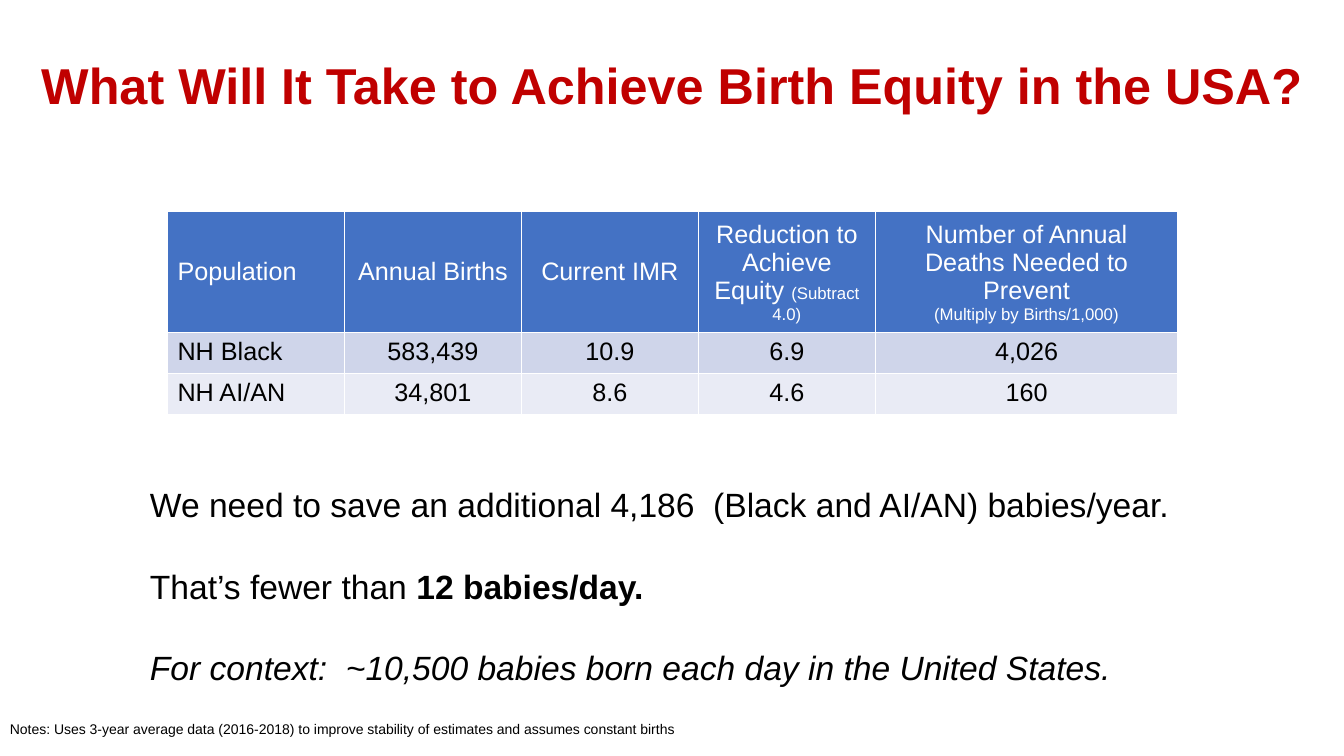
from dataclasses import dataclass

from lxml.etree import SubElement
from pptx import Presentation
from pptx.dml.color import RGBColor
from pptx.enum.text import MSO_ANCHOR as Anchor, PP_ALIGN as Align
from pptx.oxml.ns import qn
from pptx.slide import Slide
from pptx.table import _Cell as Cell
from pptx.text.text import TextFrame
from pptx.util import Cm, Pt

FONT = "Arial"
RED = RGBColor(0xC0, 0x00, 0x00)
BLACK = RGBColor(0x00, 0x00, 0x00)
WHITE = RGBColor(0xFF, 0xFF, 0xFF)
HEADER_BLUE = RGBColor(0x44, 0x72, 0xC4)
BAND_DARK = RGBColor(0xCF, 0xD5, 0xEA)
BAND_LIGHT = RGBColor(0xE9, 0xEB, 0xF5)


@dataclass(frozen=True)
class Span:
    text: str
    size: float
    color: RGBColor = BLACK
    bold: bool = False
    italic: bool = False


@dataclass(frozen=True)
class TextBlock:
    left: float
    top: float
    width: float
    height: float
    paragraphs: list[list[Span]]
    align: Align = Align.LEFT
    anchor: Anchor = Anchor.TOP
    gap: float = 0
    line_spacing: float = 1.0


@dataclass(frozen=True)
class TableRow:
    height: float
    fill: RGBColor
    anchor: Anchor
    cells: list[list[list[Span]]]


def write_paragraphs(frame: TextFrame, paragraphs: list[list[Span]], align: Align,
                     gap: float = 0, line_spacing: float = 1.0) -> None:
    for index, spans in enumerate(paragraphs):
        para = frame.add_paragraph() if index else frame.paragraphs[0]
        para.alignment = align
        para.line_spacing = line_spacing
        para.space_before = Pt(gap if index else 0)
        for span in spans:
            run = para.add_run()
            run.text = span.text
            run.font.name = FONT
            run.font.size = Pt(span.size)
            run.font.bold = span.bold
            run.font.italic = span.italic
            run.font.color.rgb = span.color


def draw_text(page: Slide, block: TextBlock) -> None:
    box = page.shapes.add_textbox(Cm(block.left), Cm(block.top), Cm(block.width), Cm(block.height))
    frame = box.text_frame
    frame.word_wrap = True
    frame.vertical_anchor = block.anchor
    write_paragraphs(frame, block.paragraphs, block.align, block.gap, block.line_spacing)


def add_borders(cell: Cell, color: RGBColor, width: float) -> None:
    properties = cell._tc.get_or_add_tcPr()
    for side in ("a:lnL", "a:lnR", "a:lnT", "a:lnB"):
        line = SubElement(properties, qn(side), w=str(Pt(width)))
        fill = SubElement(line, qn("a:solidFill"))
        SubElement(fill, qn("a:srgbClr"), val=str(color))


def draw_table(page: Slide, left: float, top: float, widths: list[float],
               rows: list[TableRow]) -> None:
    frame = page.shapes.add_table(len(rows), len(widths), Cm(left), Cm(top),
                                  Cm(sum(widths)), Cm(sum(row.height for row in rows)))
    table = frame.table
    for column, width in zip(table.columns, widths):
        column.width = Cm(width)
    for row_index, row in enumerate(rows):
        table.rows[row_index].height = Cm(row.height)
        for column_index, paragraphs in enumerate(row.cells):
            cell = table.cell(row_index, column_index)
            add_borders(cell, WHITE, 1)
            cell.fill.solid()
            cell.fill.fore_color.rgb = row.fill
            cell.vertical_anchor = row.anchor
            align = Align.CENTER if column_index else Align.LEFT
            write_paragraphs(cell.text_frame, paragraphs, align)


def heading(text: str) -> Span:
    return Span(text, 18, WHITE)


def formula(text: str) -> Span:
    return Span(text, 12, WHITE)


def data_row(fill: RGBColor, *values: str) -> TableRow:
    return TableRow(1.03, fill, Anchor.TOP, [[[Span(value, 18)]] for value in values])


TITLE = TextBlock(
    0.36, 0.38, 33.17, 3.68,
    [[Span("What Will It Take to Achieve Birth Equity in the USA?", 36, RED, bold=True)]],
    align=Align.CENTER, anchor=Anchor.MIDDLE, line_spacing=0.9)

MESSAGE = TextBlock(
    3.53, 12.07, 26.52, 5.38,
    [[Span("We need to save an additional 4,186  (Black and AI/AN) babies/year.", 24)],
     [Span("That’s fewer than ", 24), Span("12 babies/day.", 24, bold=True)],
     [Span("For context:  ~10,500 babies born each day in the United States.", 24, italic=True)]],
    gap=29.5)

NOTES = TextBlock(
    0, 18.03, 33.87, 0.69,
    [[Span("Notes: Uses 3-year average data (2016-2018) to improve stability of estimates "
           "and assumes constant births", 10)]])

COLUMN_WIDTHS = [4.46] * 4 + [7.62]
EQUITY_ROWS = [
    TableRow(3.04, HEADER_BLUE, Anchor.MIDDLE, [
        [[heading("Population")]],
        [[heading("Annual Births")]],
        [[heading("Current IMR")]],
        [[heading("Reduction to Achieve Equity "), formula("(Subtract 4.0)")]],
        [[heading("Number of Annual Deaths Needed to Prevent")],
         [formula("(Multiply by Births/1,000)")]],
    ]),
    data_row(BAND_DARK, "NH Black", "583,439", "10.9", "6.9", "4,026"),
    data_row(BAND_LIGHT, "NH AI/AN", "34,801", "8.6", "4.6", "160"),
]


def main() -> None:
    deck = Presentation()
    deck.slide_width, deck.slide_height = Cm(33.87), Cm(19.05)
    page = deck.slides.add_slide(deck.slide_layouts[6])

    # Title, message and footnote
    for block in (TITLE, MESSAGE, NOTES):
        draw_text(page, block)

    # Births and deaths by population
    draw_table(page, 4.22, 5.33, COLUMN_WIDTHS, EQUITY_ROWS)

    deck.save("out.pptx")


if __name__ == "__main__":
    main()
